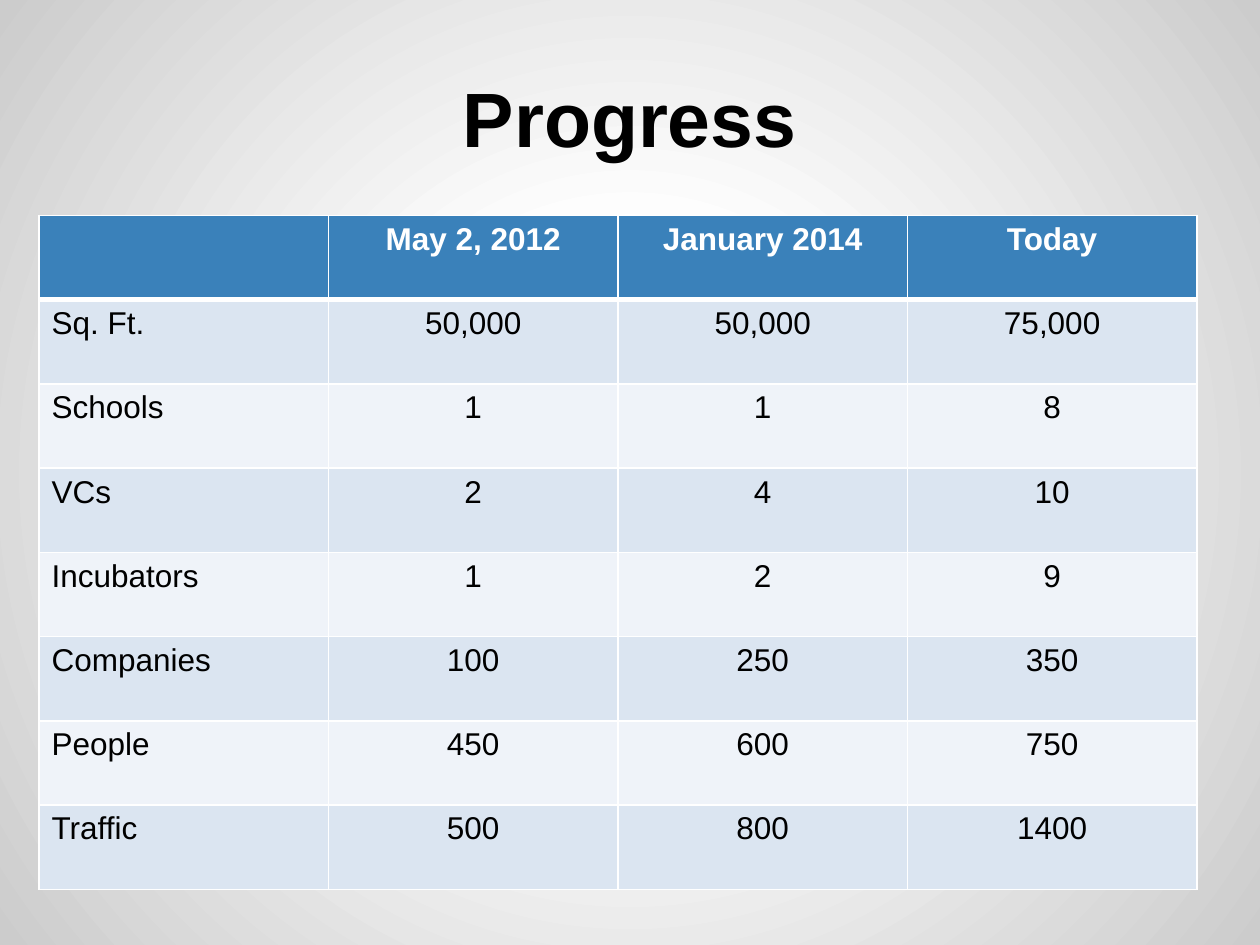
from dataclasses import dataclass

from lxml.etree import SubElement
from pptx import Presentation
from pptx.dml.color import RGBColor
from pptx.enum.text import MSO_ANCHOR, PP_ALIGN
from pptx.oxml import parse_xml
from pptx.oxml.ns import nsdecls, qn
from pptx.util import Inches, Pt


@dataclass(frozen=True)
class Theme:
    font: str = "Arial"
    ink: str = "000000"
    white: str = "FFFFFF"
    edge: str = "CCCCCC"
    header: str = "3A81BA"
    bands: tuple = ("DBE5F1", "EFF3F9")
    title_size: int = 44
    table_size: int = 18
    rule: int = 1
    header_rule: int = 3


THEME = Theme()

HEADINGS = ("", "May 2, 2012", "January 2014", "Today")
MEASURES = (
    ("Sq. Ft.", "50,000", "50,000", "75,000"),
    ("Schools", "1", "1", "8"),
    ("VCs", "2", "4", "10"),
    ("Incubators", "1", "2", "9"),
    ("Companies", "100", "250", "350"),
    ("People", "450", "600", "750"),
    ("Traffic", "500", "800", "1400"),
)


def write(frame, text, *, size, color=THEME.ink, bold=False, align=PP_ALIGN.CENTER):
    paragraph = frame.paragraphs[0]
    paragraph.alignment = align
    paragraph.font.size = Pt(size)
    if not text:
        return
    run = paragraph.add_run()
    run.text = text
    run.font.name = THEME.font
    run.font.size = Pt(size)
    run.font.bold = bold
    run.font.color.rgb = RGBColor.from_string(color)


def paint_background(slide):
    """Fill the slide with a radial gradient, white at its centre."""
    fill = slide.background.fill
    fill.solid()
    fill.fore_color.rgb = RGBColor.from_string(THEME.white)
    solid = next(slide.element.iter(qn("a:solidFill")))
    stops = ((0, THEME.white), (30, THEME.white), (100, THEME.edge))
    stop_xml = "".join(
        f'<a:gs pos="{percent * 1000}"><a:srgbClr val="{color}"/></a:gs>'
        for percent, color in stops
    )
    gradient = parse_xml(
        f'<a:gradFill {nsdecls("a")} rotWithShape="1"><a:gsLst>{stop_xml}</a:gsLst>'
        '<a:path path="circle"><a:fillToRect l="50000" t="50000" r="50000" b="50000"/>'
        "</a:path></a:gradFill>"
    )
    solid.getparent().replace(solid, gradient)


def add_title(slide, text, left, top, width, height):
    frame = slide.shapes.add_textbox(left, top, width, height).text_frame
    frame.word_wrap = True
    frame.vertical_anchor = MSO_ANCHOR.MIDDLE
    write(frame, text, size=THEME.title_size, bold=True)


def set_borders(cell, top, bottom):
    """Draw white cell borders; top and bottom are widths in points."""
    properties = cell._tc.get_or_add_tcPr()
    widths = {"lnL": THEME.rule, "lnR": THEME.rule, "lnT": top, "lnB": bottom}
    for side, width in widths.items():
        line = SubElement(properties, qn(f"a:{side}"), w=str(Pt(width)))
        SubElement(SubElement(line, qn("a:solidFill")), qn("a:srgbClr"), val=THEME.white)


def add_progress_table(slide, left, top, width, height):
    rows = (HEADINGS, *MEASURES)
    table = slide.shapes.add_table(
        len(rows), len(HEADINGS), left, top, width, height
    ).table
    for row_index, values in enumerate(rows):
        is_header = row_index == 0
        background = THEME.header if is_header else THEME.bands[(row_index - 1) % 2]
        for column_index, value in enumerate(values):
            cell = table.cell(row_index, column_index)
            set_borders(
                cell,
                top=THEME.header_rule if row_index == 1 else THEME.rule,
                bottom=THEME.header_rule if is_header else THEME.rule,
            )
            cell.fill.solid()
            cell.fill.fore_color.rgb = RGBColor.from_string(background)
            is_label = column_index == 0 and not is_header
            write(
                cell.text_frame,
                value,
                size=THEME.table_size,
                color=THEME.white if is_header else THEME.ink,
                bold=is_header,
                align=PP_ALIGN.LEFT if is_label else PP_ALIGN.CENTER,
            )


def main():
    deck = Presentation()
    deck.slide_width, deck.slide_height = Inches(10), Inches(7.5)
    slide = deck.slides.add_slide(deck.slide_layouts[6])
    paint_background(slide)
    add_title(slide, "Progress", Inches(0.5), Inches(0.3), Inches(9), Inches(1.25))
    add_progress_table(slide, Inches(0.31), Inches(1.71), Inches(9.19), Inches(5.35))
    deck.save("out.pptx")


if __name__ == "__main__":
    main()
